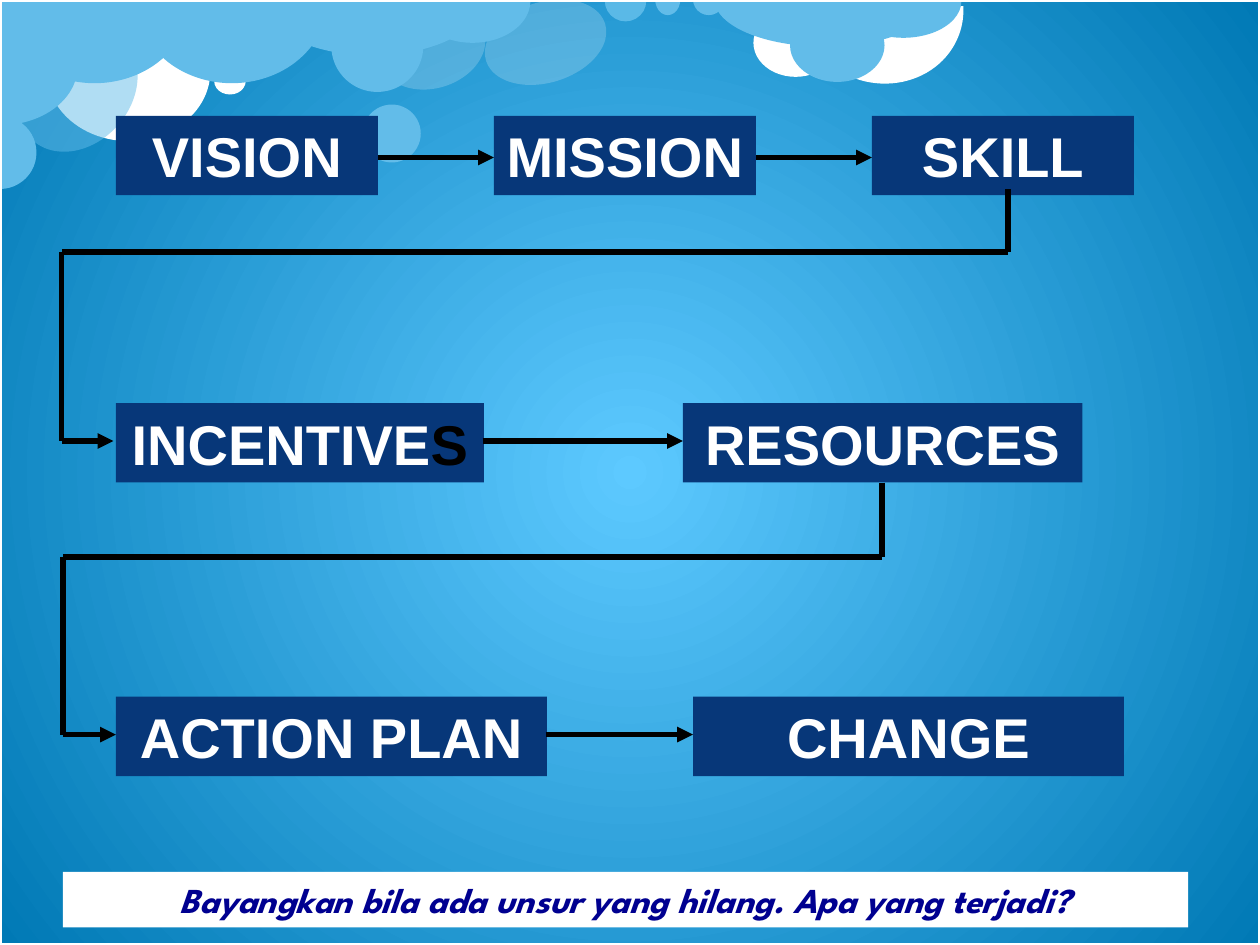
from lxml.etree import SubElement
from pptx import Presentation
from pptx.dml.color import RGBColor
from pptx.enum.shapes import MSO_CONNECTOR, MSO_SHAPE
from pptx.enum.text import MSO_ANCHOR, MSO_AUTO_SIZE, PP_ALIGN
from pptx.oxml.ns import qn
from pptx.util import Inches, Pt

COLORS = {"white": "FFFFFF", "black": "000000", "cloud": "62BCE9", "pale": "8FD9FB",
          "glow": "5DC9FF", "edge": "0079B5", "navy": "073779", "question": "000090"}


def rgb(name):
    return RGBColor.from_string(COLORS[name])


def add_box(text="", *, at, kind=MSO_SHAPE.RECTANGLE, fill=None, opacity=100, rotation=0,
            adjust=(), size=32, font="Arial", italic=False, color="white", last_color=None):
    """Add a shape; last_color recolours the final letter of its text."""
    box = slide.shapes.add_shape(kind, *[Inches(v) for v in at])
    box.shadow.inherit = False
    box.rotation = rotation
    for i, value in enumerate(adjust):
        box.adjustments[i] = value
    box.line.fill.background()
    if fill:
        box.fill.solid()
        box.fill.fore_color.rgb = rgb(fill)
        if opacity < 100:
            tint = box._element.spPr.find(".//" + qn("a:srgbClr"))
            SubElement(tint, qn("a:alpha"), val=str(opacity * 1000))
    else:
        box.fill.background()
    if text:
        frame = box.text_frame
        frame.word_wrap = True
        frame.auto_size = MSO_AUTO_SIZE.SHAPE_TO_FIT_TEXT
        frame.vertical_anchor = MSO_ANCHOR.MIDDLE
        paragraph = frame.paragraphs[0]
        paragraph.alignment = PP_ALIGN.CENTER
        parts = [(text[:-1], color), (text[-1], last_color)] if last_color else [(text, color)]
        for part, part_color in parts:
            run = paragraph.add_run()
            run.text = part
            run.font.name = font
            run.font.size = Pt(size)
            run.font.bold = True
            run.font.italic = italic
            run.font.color.rgb = rgb(part_color)
    return box


prs = Presentation()
prs.slide_width, prs.slide_height = Inches(10), Inches(7.5)
slide = prs.slides.add_slide(prs.slide_layouts[6])

# Background: radial glow
background = slide.background.fill
background.gradient()
for stop, name in zip(background.gradient_stops, ("glow", "edge")):
    stop.color.rgb = rgb(name)
gradient = slide._element.find(".//" + qn("a:gradFill"))
gradient.remove(gradient.find(qn("a:lin")))
radial = SubElement(gradient, qn("a:path"), path="circle")
SubElement(radial, qn("a:fillToRect"), l="50000", t="50000", r="50000", b="50000")

# Clouds, from back to front
OVAL, PIE, ARC = MSO_SHAPE.OVAL, MSO_SHAPE.PIE, MSO_SHAPE.ARC
HALF = (0, 108)
clouds = [
    (OVAL, (3.11, -0.05, 0.64, 0.86), "white", 20, 72.8, ()),
    (OVAL, (0.37, 0.01, 1.3, 1.11), "white", 100, 0, ()),
    (ARC, (6.39, -0.6, 1.21, 1.31), "white", 100, 106.5, (151.8, 44.48)),
    (OVAL, (5.98, 0.07, 0.67, 0.54), "white", 100, 0, ()),
    (PIE, (-0.01, -0.66, 1.52, 1.32), "cloud", 100, 0, HALF),
    (PIE, (2.08, -0.44, 1.75, 0.88), "cloud", 100, 0, HALF),
    (OVAL, (2.88, 0.83, 0.46, 0.46), "cloud", 100, 0, ()),
    (OVAL, (0.19, 0.18, 0.85, 1.07), "cloud", 50, 41.8, ()),
    (PIE, (-0.29, 0.92, 0.58, 0.58), "cloud", 100, 270, HALF),
    (OVAL, (1.7, 0.54, 0.25, 0.21), "white", 100, 0, ()),
    (PIE, (1.08, -0.66, 1.52, 1.32), "cloud", 100, 0, HALF),
    (PIE, (5.67, -0.38, 1.75, 0.75), "cloud", 100, 0, HALF),
    (OVAL, (6.27, 0.07, 0.75, 0.58), "cloud", 100, 0, ()),
    (PIE, (6.71, -0.28, 0.92, 0.58), "cloud", 100, 0, HALF),
    (OVAL, (4.01, -0.16, 0.64, 0.99), "white", 20, 72.8, ()),
    (PIE, (4.8, -0.16, 0.33, 0.33), "pale", 50, 0, HALF),
    (PIE, (5.2, -0.13, 0.2, 0.25), "cloud", 100, 0, HALF),
    (PIE, (5.5, -0.13, 0.25, 0.25), "cloud", 100, 0, HALF),
    (OVAL, (2.63, 0, 0.73, 0.73), "cloud", 100, 0, ()),
    (PIE, (3.29, -0.33, 0.92, 0.67), "cloud", 100, 0, HALF),
    (PIE, (-0.47, -0.09, 0.93, 1.24), "cloud", 100, 270, HALF),
]
for kind, at, fill, opacity, rotation, adjust in clouds:
    add_box(at=at, kind=kind, fill=fill, opacity=opacity, rotation=rotation, adjust=adjust)

# White border
border = add_box(at=(0, 0, 10, 7.5))
border.line.color.rgb = rgb("white")
border.line.width = Pt(2)

# Steps of change, row by row: top, then (label, left, width)
rows = [
    (0.92, [("VISION", 0.92, 2.08), ("MISSION", 3.92, 2.08), ("SKILL", 6.92, 2.08)]),
    (3.2, [("INCENTIVES", 0.92, 2.92), ("RESOURCES", 5.42, 3.17)]),
    (5.53, [("ACTION PLAN", 0.92, 3.42), ("CHANGE", 5.5, 3.42)]),
]
for top, steps in rows:
    for label, left, width in steps:
        add_box(label, at=(left, top, width, 0.63), fill="navy",
                last_color="black" if label == "INCENTIVES" else None)

# Routes between steps; the last leg of each carries the arrowhead
routes = [
    [(3, 1.25), (3.92, 1.25)],
    [(6, 1.25), (6.92, 1.25)],
    [(8, 1.5), (8, 2), (0.49, 2), (0.49, 3.5), (0.9, 3.5)],
    [(3.83, 3.5), (5.42, 3.5)],
    [(7, 3.83), (7, 4.42), (0.5, 4.42), (0.5, 5.83), (0.92, 5.83)],
    [(4.33, 5.83), (5.5, 5.83)],
]
for route in routes:
    for start, end in zip(route, route[1:]):
        leg = slide.shapes.add_connector(MSO_CONNECTOR.STRAIGHT,
                                         *[Inches(v) for v in start + end])
        leg.line.color.rgb = rgb("black")
        leg.line.width = Pt(3)
        if end == route[-1]:
            SubElement(leg.line._get_or_add_ln(), qn("a:tailEnd"), type="triangle")
        SubElement(leg._element.spPr, qn("a:effectLst"))

# Closing question
add_box("Bayangkan bila ada unsur yang hilang. Apa yang terjadi?", at=(0.5, 6.92, 8.93, 0.44),
        fill="white", size=20, font="League Spartan", italic=True, color="question")

prs.save("out.pptx")
